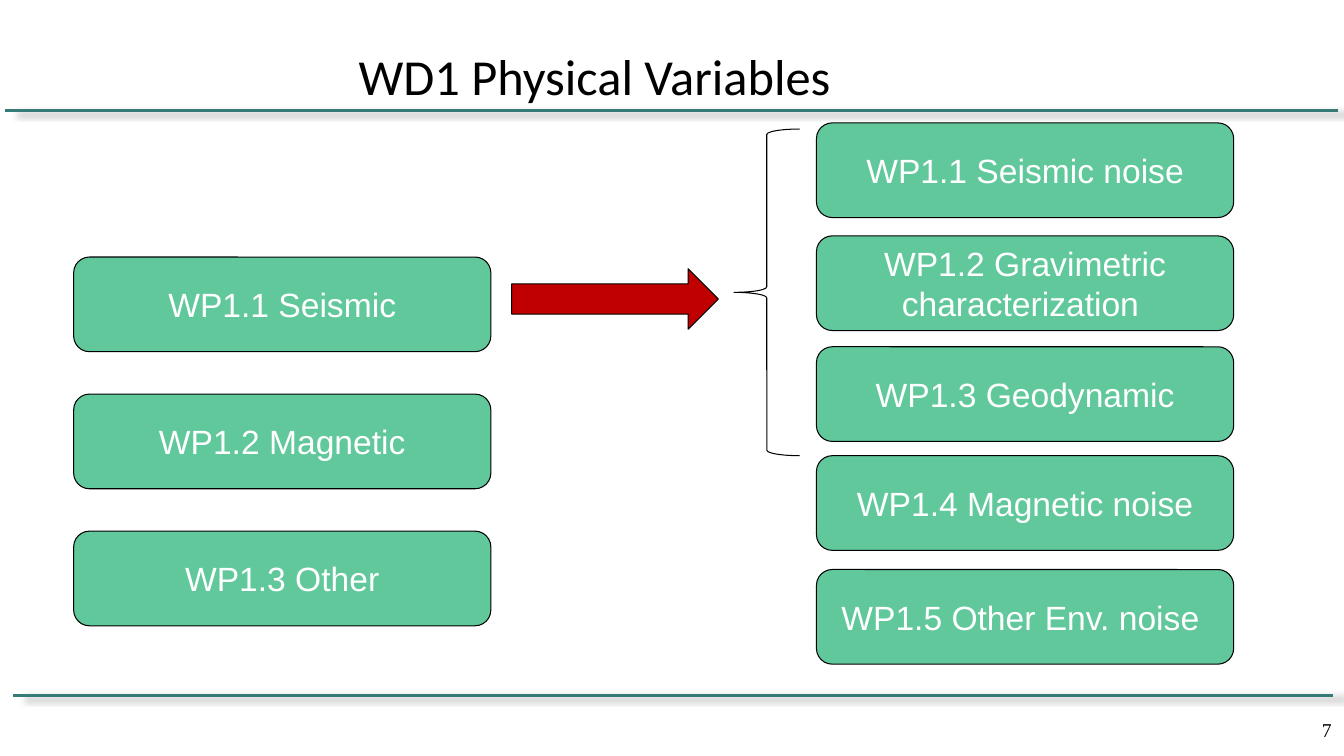
"""Builds the slide that maps the WD1 work packages to their refined list."""
from lxml.etree import SubElement
from pptx import Presentation
from pptx.dml.color import RGBColor
from pptx.enum.shapes import MSO_CONNECTOR, MSO_SHAPE
from pptx.enum.text import MSO_ANCHOR, PP_ALIGN
from pptx.oxml import parse_xml
from pptx.oxml.ns import nsdecls
from pptx.util import Pt

BLACK = RGBColor(0x00, 0x00, 0x00)
WHITE = RGBColor(0xFF, 0xFF, 0xFF)
GREEN = RGBColor(0x60, 0xC8, 0x9B)
RED = RGBColor(0xC0, 0x00, 0x00)
TEAL = RGBColor(0x36, 0x7B, 0x77)

RULE_SHADOW = (
    f'<a:effectLst {nsdecls("a")}>'
    f'<a:outerShdw blurRad="{Pt(5)}" dist="{Pt(8.7)}" dir="{13 * 60000}" algn="ctr" rotWithShape="0">'
    '<a:srgbClr val="808080"><a:alpha val="44000"/></a:srgbClr>'
    '</a:outerShdw></a:effectLst>'
)


def add_text(shape, text, font, size, color, align, anchor):
    """Write one wrapped paragraph into the shape and return it."""
    frame = shape.text_frame
    frame.word_wrap = True
    frame.vertical_anchor = anchor
    para = frame.paragraphs[0]
    para.alignment = align
    span = para.add_run()
    span.text = text
    span.font.name = font
    span.font.size = Pt(size)
    span.font.color.rgb = color
    return para


def add_outlined(kind, left, top, width, height, fill=None):
    """Add a preset shape with a thin black outline."""
    shape = page.shapes.add_shape(kind, Pt(left), Pt(top), Pt(width), Pt(height))
    shape.shadow.inherit = False
    if fill is None:
        shape.fill.background()
    else:
        shape.fill.solid()
        shape.fill.fore_color.rgb = fill
    shape.line.color.rgb = BLACK
    shape.line.width = Pt(0.75)
    return shape


deck = Presentation()
deck.slide_width, deck.slide_height = Pt(960), Pt(540)
page = deck.slides.add_slide(deck.slide_layouts[6])

for start, end, height in [(956, 3.6, 79.2), (952.5, 9.4, 496.8)]:
    rule = page.shapes.add_connector(
        MSO_CONNECTOR.STRAIGHT, Pt(start), Pt(height), Pt(end), Pt(height))
    rule.line.color.rgb = TEAL
    rule.line.width = Pt(2)
    rule._element.spPr.append(parse_xml(RULE_SHADOW))

number_box = page.shapes.add_textbox(Pt(773.3), Pt(496), Pt(185), Pt(37.5))
number = add_text(number_box, "", "Times New Roman", 14, BLACK, PP_ALIGN.RIGHT, MSO_ANCHOR.BOTTOM)
number.line_spacing = 0.93
number.runs[0].text = "7"

title_box = page.shapes.add_textbox(Pt(64.8), Pt(16.6), Pt(720), Pt(74))
add_text(title_box, "WD1 Physical Variables", "Calibri", 36, BLACK, PP_ALIGN.CENTER, MSO_ANCHOR.MIDDLE)

columns = [
    (52.6, [
        (183.6, "WP1.1 Seismic"),
        (281.5, "WP1.2 Magnetic"),
        (379.4, "WP1.3 Other"),
    ]),
    (583.2, [
        (87.8, "WP1.1 Seismic noise"),
        (168.5, "WP1.2 Gravimetric characterization "),
        (247.7, "WP1.3 Geodynamic"),
        (325.5, "WP1.4 Magnetic noise"),
        (406.8, "WP1.5 Other Env. noise "),
    ]),
]
for left, packages in columns:
    for top, label in packages:
        package_box = add_outlined(MSO_SHAPE.ROUNDED_RECTANGLE, left, top, 298, 67.6, GREEN)
        add_text(package_box, label, "Arial", 24, WHITE, PP_ALIGN.CENTER, MSO_ANCHOR.MIDDLE)

add_outlined(MSO_SHAPE.RIGHT_ARROW, 365.5, 192, 147.6, 43.2, RED)
add_outlined(MSO_SHAPE.LEFT_BRACE, 524.3, 92.2, 46.8, 233.3)

deck.save("out.pptx")
